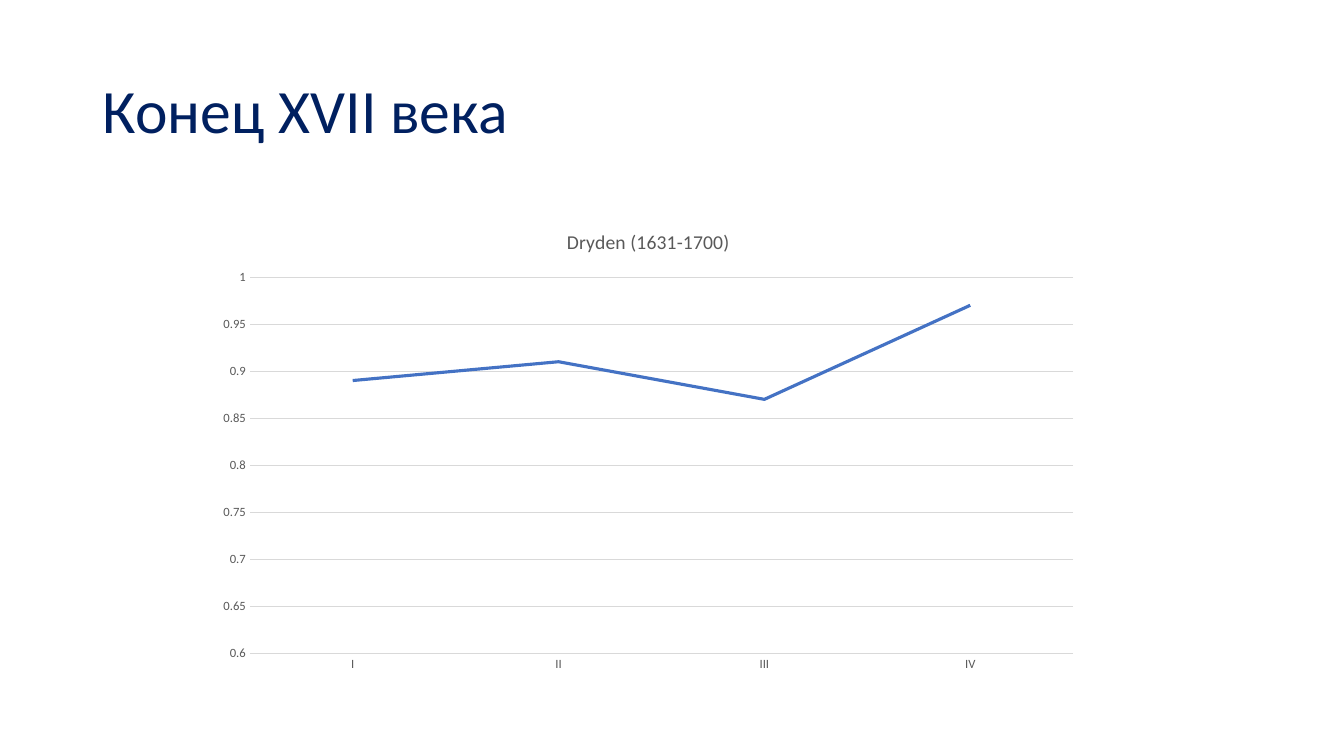
from dataclasses import dataclass

from pptx import Presentation
from pptx import util as u
from pptx.chart import data as chart_data
from pptx.dml import color
from pptx.enum import chart as ch
from pptx.enum import text

COLORS = {"title": "002060", "label": "595959", "grid": "D9D9D9", "series": "4472C4"}
FONT = "Calibri"


@dataclass
class Series:
    name: str
    cats: tuple[str, ...]
    vals: tuple[float, ...]


DRYDEN = Series("Dryden (1631-1700)", ("I", "II", "III", "IV"), (0.89, 0.91, 0.87, 0.97))


def rgb(name: str) -> color.RGBColor:
    return color.RGBColor.from_string(COLORS[name])


def format_font(font, *, size: float, fill: str = "label") -> None:
    font.name = FONT
    font.size = u.Pt(size)
    font.bold = False
    font.color.rgb = rgb(fill)


def write_text(tf, content: str, *, size: float, fill: str = "label",
               align=None, spacing: float | None = None) -> None:
    p = tf.paragraphs[0]
    p.alignment = align
    p.line_spacing = spacing
    r = p.add_run()
    r.text = content
    format_font(r.font, size=size, fill=fill)


def format_line(line, *, fill: str, width: float) -> None:
    line.color.rgb = rgb(fill)
    line.width = u.Pt(width)


def format_axis(axis) -> None:
    axis.major_tick_mark = axis.minor_tick_mark = ch.XL_TICK_MARK.NONE
    format_font(axis.tick_labels.font, size=9)


def add_title(s, content: str) -> None:
    sp = s.shapes.title
    sp.left, sp.top = u.Inches(0.92), u.Inches(0.4)
    sp.width, sp.height = u.Inches(11.5), u.Inches(1.45)
    tf = sp.text_frame
    tf.vertical_anchor = text.MSO_ANCHOR.MIDDLE
    write_text(tf, content, size=44, fill="title", align=text.PP_ALIGN.LEFT, spacing=0.9)


def add_line_chart(s, series: Series) -> None:
    cd = chart_data.CategoryChartData(number_format="General")
    cd.categories = series.cats
    cd.add_series(series.name, series.vals)
    chart = s.shapes.add_chart(
        ch.XL_CHART_TYPE.LINE, u.Inches(2.04), u.Inches(2.08),
        u.Inches(8.78), u.Inches(4.68), cd).chart
    chart.has_legend = False
    chart.font.name, chart.font.size = FONT, u.Pt(10)
    chart.has_title = True
    write_text(chart.chart_title.text_frame, series.name, size=14)
    chart.chart_title.include_in_layout = False

    format_axis(chart.category_axis)
    format_line(chart.category_axis.format.line, fill="grid", width=0.75)

    axis = chart.value_axis
    format_axis(axis)
    axis.minimum_scale, axis.maximum_scale, axis.major_unit = 0.6, 1, 0.05
    axis.format.line.fill.background()
    axis.has_major_gridlines = True
    format_line(axis.major_gridlines.format.line, fill="grid", width=0.75)

    plot = chart.plots[0]
    plot.vary_by_categories = False
    curve = plot.series[0]
    curve.smooth = False
    curve.marker.style = ch.XL_MARKER_STYLE.NONE
    format_line(curve.format.line, fill="series", width=2.25)


def main() -> None:
    prs = Presentation()
    prs.slide_width, prs.slide_height = u.Inches(13.33), u.Inches(7.5)
    s = prs.slides.add_slide(prs.slide_layouts.get_by_name("Title Only"))
    add_title(s, "Конец XVII века")
    add_line_chart(s, DRYDEN)
    prs.save("out.pptx")


if __name__ == "__main__":
    main()
